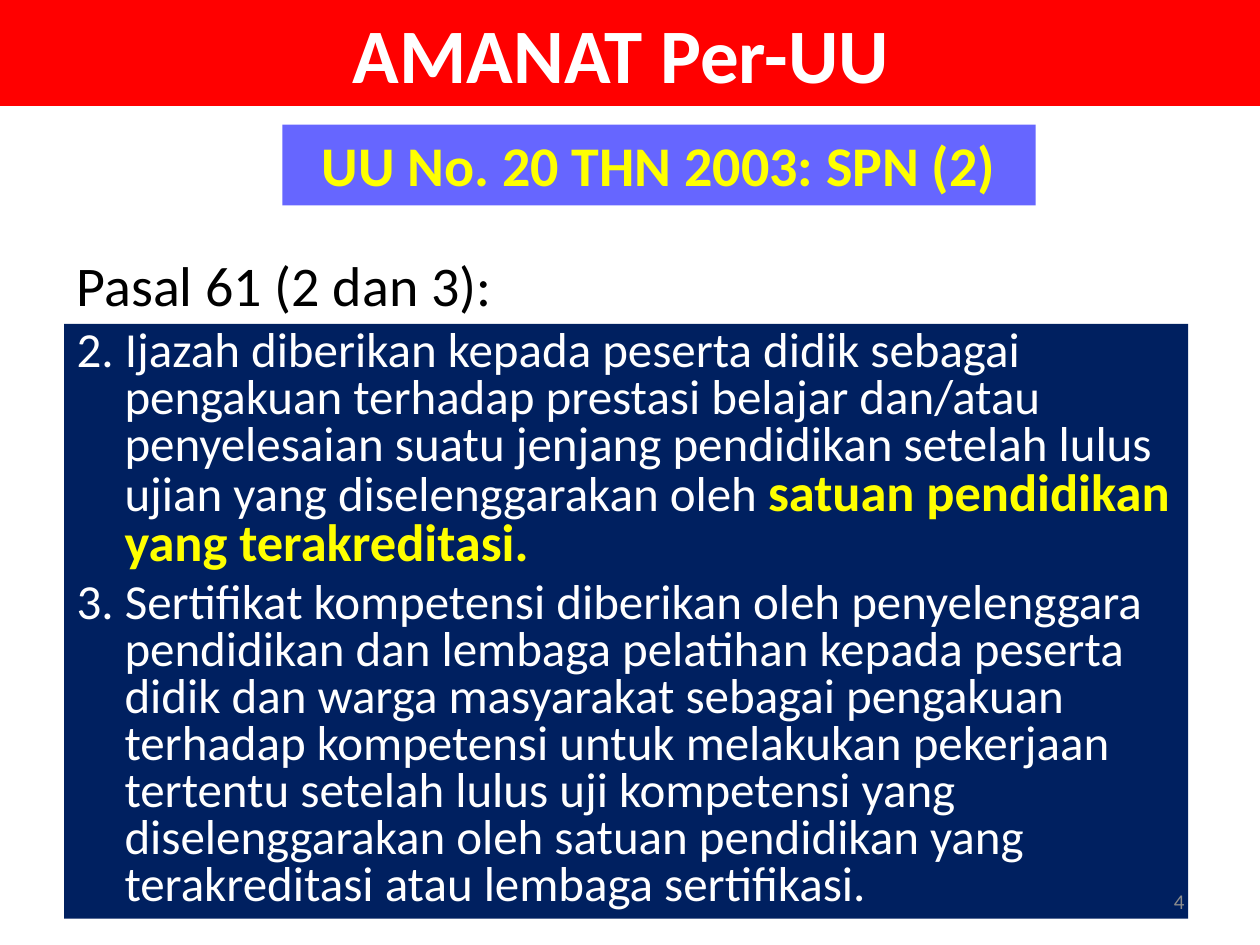
from dataclasses import dataclass
from typing import Optional

from pptx import Presentation
from pptx.dml.color import RGBColor
from pptx.enum.shapes import MSO_SHAPE as Shape
from pptx.enum.text import MSO_ANCHOR as Anchor, MSO_AUTO_SIZE as AutoSize, PP_ALIGN as Align
from pptx.util import Inches, Pt

COLORS = {
    "red": "FF0000",
    "violet": "6666FF",
    "navy": "002060",
    "white": "FFFFFF",
    "yellow": "FFFF00",
    "black": "000000",
    "gray": "8C8C8C",
}
FONT = "Calibri"
HANGING = Inches(0.38)


@dataclass
class Box:
    left: float
    top: float
    width: float
    height: float
    fill: Optional[str] = None
    anchor: Anchor = Anchor.TOP
    grow: bool = True


def add_box(slide, box: Box):
    """Add a filled rectangle, or a text box when there is no fill."""
    position = [Inches(value) for value in (box.left, box.top, box.width, box.height)]
    if box.fill:
        shape = slide.shapes.add_shape(Shape.RECTANGLE, *position)
        shape.shadow.inherit = False
        shape.fill.solid()
        shape.fill.fore_color.rgb = RGBColor.from_string(COLORS[box.fill])
        shape.line.fill.background()
    else:
        shape = slide.shapes.add_textbox(*position)
    frame = shape.text_frame
    frame.word_wrap = True
    frame.vertical_anchor = box.anchor
    frame.auto_size = AutoSize.SHAPE_TO_FIT_TEXT if box.grow else AutoSize.NONE
    return frame


def add_text(paragraph, text: str, *, size: float, color: str, bold: bool = False,
             align: Align = Align.LEFT) -> None:
    """Append a formatted run to a paragraph."""
    paragraph.alignment = align
    run = paragraph.add_run()
    run.text = text
    run.font.name = FONT
    run.font.size = Pt(size)
    run.font.bold = bold
    run.font.color.rgb = RGBColor.from_string(COLORS[color])


def format_clause(paragraph) -> None:
    """Give a numbered clause its hanging indent and tight spacing."""
    paragraph.line_spacing = 0.8
    paragraph.space_before = Pt(5.6)
    properties = paragraph._p.get_or_add_pPr()
    properties.set("marL", str(HANGING))
    properties.set("indent", str(-HANGING))


def main() -> None:
    presentation = Presentation()
    presentation.slide_width = Inches(10)
    presentation.slide_height = Inches(7.5)
    slide = presentation.slides.add_slide(presentation.slide_layouts[6])

    # Title band and law reference
    title = add_box(slide, Box(0, 0, 10, 0.84, "red"))
    add_text(title.paragraphs[0], "AMANAT Per-UU ", size=44, color="white", bold=True,
             align=Align.CENTER)
    law = add_box(slide, Box(2.24, 0.99, 5.98, 0.64, "violet"))
    add_text(law.paragraphs[0], "UU No. 20 THN 2003: SPN (2)", size=32, color="yellow",
             bold=True, align=Align.CENTER)

    # Article heading
    article = add_box(slide, Box(0.51, 1.94, 3.7, 0.64))
    add_text(article.paragraphs[0], "Pasal 61 (2 dan 3):", size=32, color="black")

    # Clauses
    clauses = add_box(slide, Box(0.51, 2.57, 8.92, 4.72, "navy", grow=False))
    diploma, certificate = clauses.paragraphs[0], clauses.add_paragraph()
    for paragraph in (diploma, certificate):
        format_clause(paragraph)
    add_text(diploma, "2. Ijazah diberikan kepada peserta didik sebagai pengakuan terhadap "
             "prestasi belajar dan/atau penyelesaian suatu jenjang pendidikan setelah lulus "
             "ujian yang diselenggarakan oleh ", size=28, color="white")
    add_text(diploma, "satuan pendidikan yang terakreditasi.", size=30, color="yellow", bold=True)
    add_text(certificate, "3. Sertifikat kompetensi diberikan oleh penyelenggara pendidikan dan "
             "lembaga pelatihan kepada peserta didik dan warga masyarakat sebagai pengakuan "
             "terhadap kompetensi untuk melakukan pekerjaan tertentu setelah lulus uji "
             "kompetensi yang diselenggarakan oleh satuan pendidikan yang terakreditasi atau "
             "lembaga sertifikasi.", size=28, color="white")

    # Slide number
    number = add_box(slide, Box(7.17, 6.95, 2.33, 0.4, anchor=Anchor.MIDDLE, grow=False))
    add_text(number.paragraphs[0], "4", size=12, color="gray", align=Align.RIGHT)

    presentation.save("out.pptx")


if __name__ == "__main__":
    main()
